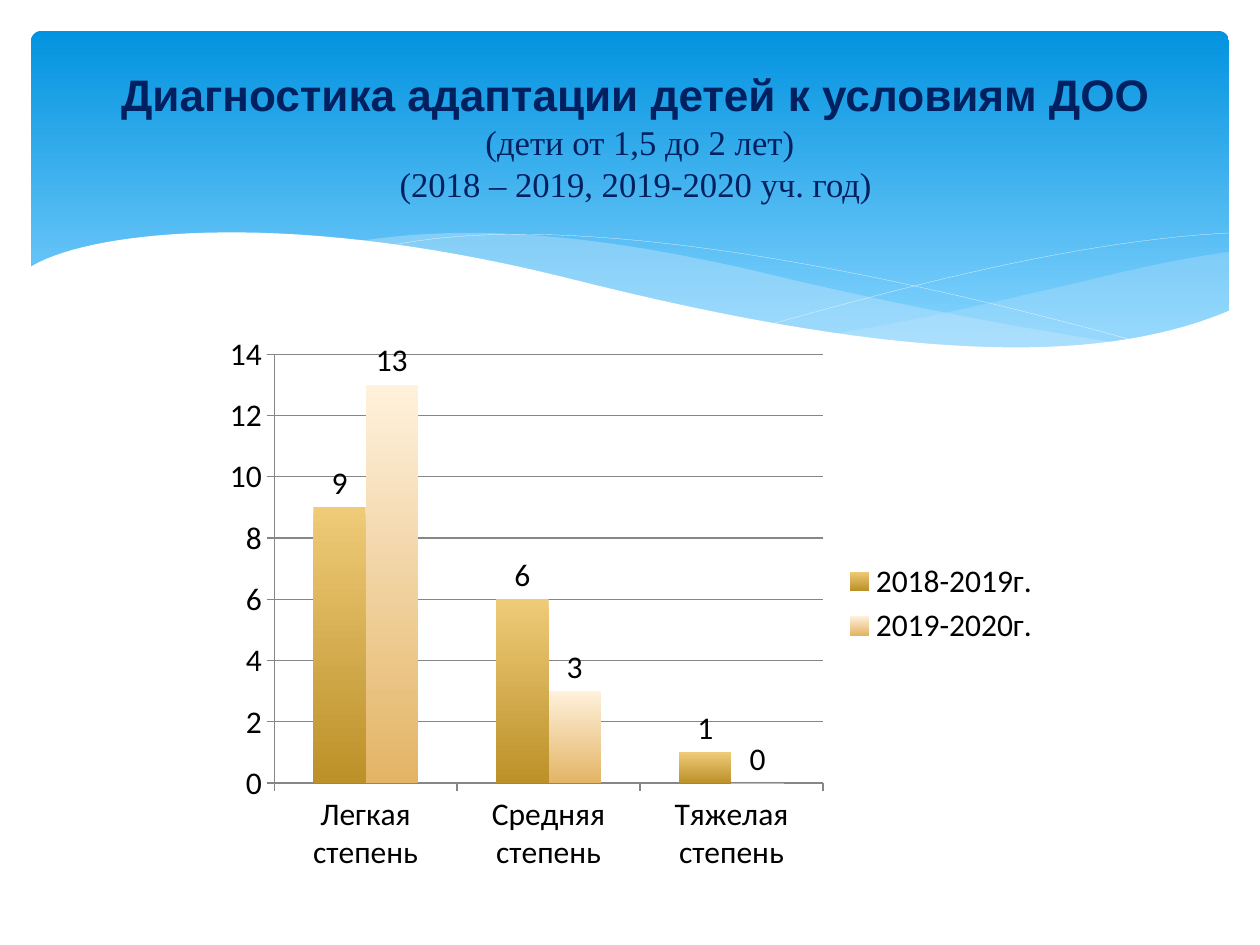
from lxml import etree
from pptx import Presentation, util as u
from pptx.chart.data import CategoryChartData
from pptx.dml.color import RGBColor
from pptx.enum import chart as ch, shapes, text
from pptx.oxml.ns import qn

PX = u.Inches(1) / 126
WHITE, BLACK = RGBColor(255, 255, 255), RGBColor(0, 0, 0)
NAVY, PALE = RGBColor(0x00, 0x20, 0x60), RGBColor(0xC6, 0xE7, 0xFC)
GREY = RGBColor(0x86, 0x86, 0x86)
BLUES = (RGBColor(0x02, 0x93, 0xE0), RGBColor(0x83, 0xD3, 0xFE))
OCHRES = (RGBColor(0xEF, 0xCA, 0x78), RGBColor(0xBC, 0x91, 0x29))
CREAMS = (RGBColor(0xFF, 0xF1, 0xDC), RGBColor(0xE3, 0xB4, 0x65))

# Content: title lines, chart data
HEADING = dict(name="Arial", size=u.Pt(25.2), bold=True)
SUBHEADING = dict(name="Times New Roman", size=u.Pt(19.8), bold=False)
TITLE = [
    ("Диагностика адаптации детей к условиям ДОО", HEADING),
    (" (дети от 1,5 до 2 лет)", SUBHEADING),
    ("(2018 – 2019, 2019-2020 уч. год)", SUBHEADING),
]
CATEGORIES = ["Легкая степень", "Средняя степень", "Тяжелая степень"]
SERIES = [("2018-2019г.", (9, 6, 1), OCHRES), ("2019-2020г.", (13, 3, 0), CREAMS)]

# Places in px: left, top, width, height
BANNER_BOX = (31, 31, 1198, 340)
TITLE_BOX = (74, 47, 1123, 178)
CHART_BOX = (213, 324, 840, 559)

# Waves: start, Bezier segments (two controls and an end), straight corners,
# fill (None for an open line) and its opacity
WAVES = [
    ((1229, 252),
     [((1182, 258), (1134, 269), (1085, 281)),
      ((990, 303), (910, 322), (833, 334)),
      ((1010, 357), (1120, 357), (1229, 311))], [], PALE, 29),
    ((1125, 344),
     [((1014, 327), (910, 307), (793, 280)),
      ((600, 232), (470, 224), (360, 241)),
      ((425, 250), (497, 263), (566, 280)),
      ((835, 346), (990, 358), (1125, 344))], [], PALE, 40),
    ((389, 246), [((535, 215), (790, 245), (1143, 343))], [], None, 100),
    ((772, 324), [((905, 287), (1075, 241), (1229, 233))], [], None, 100),
    ((1231, 310),
     [((1114, 360), (928, 370), (563, 277)),
      ((271, 205), (80, 234), (29, 268))],
     [(29, 415), (1231, 415)], WHITE, 100),
]


def emu(values):
    return [round(v * PX) for v in values]


def set_all(obj, values):
    for key, value in values.items():
        setattr(obj, key, value)


def fill_gradient(fill, colors, end=1.0):
    fill.gradient()
    fill.gradient_angle = 270
    for stop, color, place in zip(fill.gradient_stops, colors, (0, end)):
        stop.color.rgb = color
        stop.position = place


def trace(start, segments, steps=32):
    """Sample a chain of cubic Bezier segments."""
    points = [start]
    for c1, c2, end in segments:
        for t in (i / steps for i in range(1, steps + 1)):
            points.append(tuple(
                (1 - t) ** 3 * a + 3 * (1 - t) ** 2 * t * b
                + 3 * (1 - t) * t ** 2 * c + t ** 3 * d
                for a, b, c, d in zip(start, c1, c2, end)))
        start = end
    return points


def add_wave(s, start, segments, corners, color, opacity):
    first, *rest = [emu(pt) for pt in trace(start, segments) + corners]
    builder = s.shapes.build_freeform(*first)
    builder.add_line_segments(rest, close=color is not None)
    sp = builder.convert_to_shape()
    sp.shadow.inherit = False
    if color is None:
        sp.fill.background()
        sp.line.color.rgb = WHITE
        sp.line.width = u.Pt(0.1)
        return
    sp.line.fill.background()
    sp.fill.solid()
    sp.fill.fore_color.rgb = color
    if opacity < 100:
        clr = sp.element.spPr.find(qn("a:solidFill"))[0]
        etree.SubElement(clr, qn("a:alpha"), val=str(opacity * 1000))


def add_title(s):
    tf = s.shapes.add_textbox(*emu(TITLE_BOX)).text_frame
    set_all(tf, dict(word_wrap=True, vertical_anchor=text.MSO_ANCHOR.MIDDLE))
    p = tf.paragraphs[0]
    p.alignment = text.PP_ALIGN.CENTER
    for i, (line, font) in enumerate(TITLE):
        if i:
            p.add_line_break()
        r = p.add_run()
        r.text = line
        set_all(r.font, font)
        r.font.color.rgb = NAVY


def add_column_chart(s):
    data = CategoryChartData()
    data.categories = CATEGORIES
    for name, values, _ in SERIES:
        data.add_series(name, values)
    chart = s.shapes.add_chart(
        ch.XL_CHART_TYPE.COLUMN_CLUSTERED, *emu(CHART_BOX), data).chart
    set_all(chart, dict(has_title=False, has_legend=True))
    set_all(chart.font, dict(name="Calibri", size=u.Pt(18)))
    chart.font.color.rgb = BLACK
    set_all(chart.legend, dict(position=ch.XL_LEGEND_POSITION.RIGHT,
                               include_in_layout=False))
    plot = chart.plots[0]
    set_all(plot, dict(gap_width=150, overlap=0, vary_by_categories=False,
                       has_data_labels=True))
    set_all(plot.data_labels, dict(show_value=True,
                                   position=ch.XL_LABEL_POSITION.OUTSIDE_END))
    for series, (_, _, colors) in zip(plot.series, SERIES):
        fill_gradient(series.format.fill, colors)
    set_all(chart.value_axis, dict(minimum_scale=0, maximum_scale=14, major_unit=2,
                                   has_major_gridlines=True))
    for axis in (chart.category_axis, chart.value_axis):
        axis.major_tick_mark = ch.XL_TICK_MARK.OUTSIDE
        axis.format.line.color.rgb = GREY
    chart.value_axis.major_gridlines.format.line.color.rgb = GREY


def main():
    prs = Presentation()
    prs.slide_width, prs.slide_height = emu((1260, 945))
    s = prs.slides.add_slide(prs.slide_layouts[6])

    # Banner with waves
    sp = s.shapes.add_shape(shapes.MSO_SHAPE.ROUNDED_RECTANGLE, *emu(BANNER_BOX))
    sp.adjustments[0] = 0.03
    sp.shadow.inherit = False
    sp.line.fill.background()
    fill_gradient(sp.fill, BLUES, 0.9)
    for wave in WAVES:
        add_wave(s, *wave)

    # Title and chart
    add_title(s)
    add_column_chart(s)
    prs.save("out.pptx")


if __name__ == "__main__":
    main()
